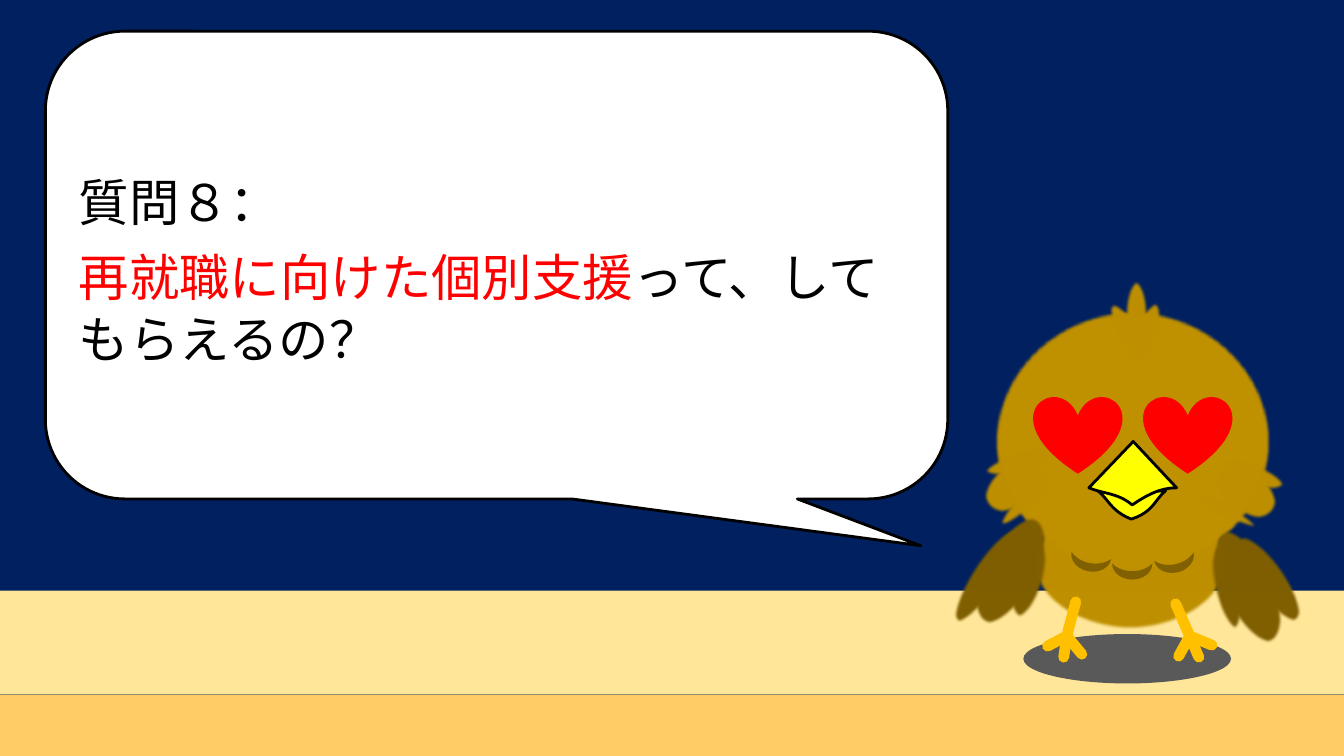
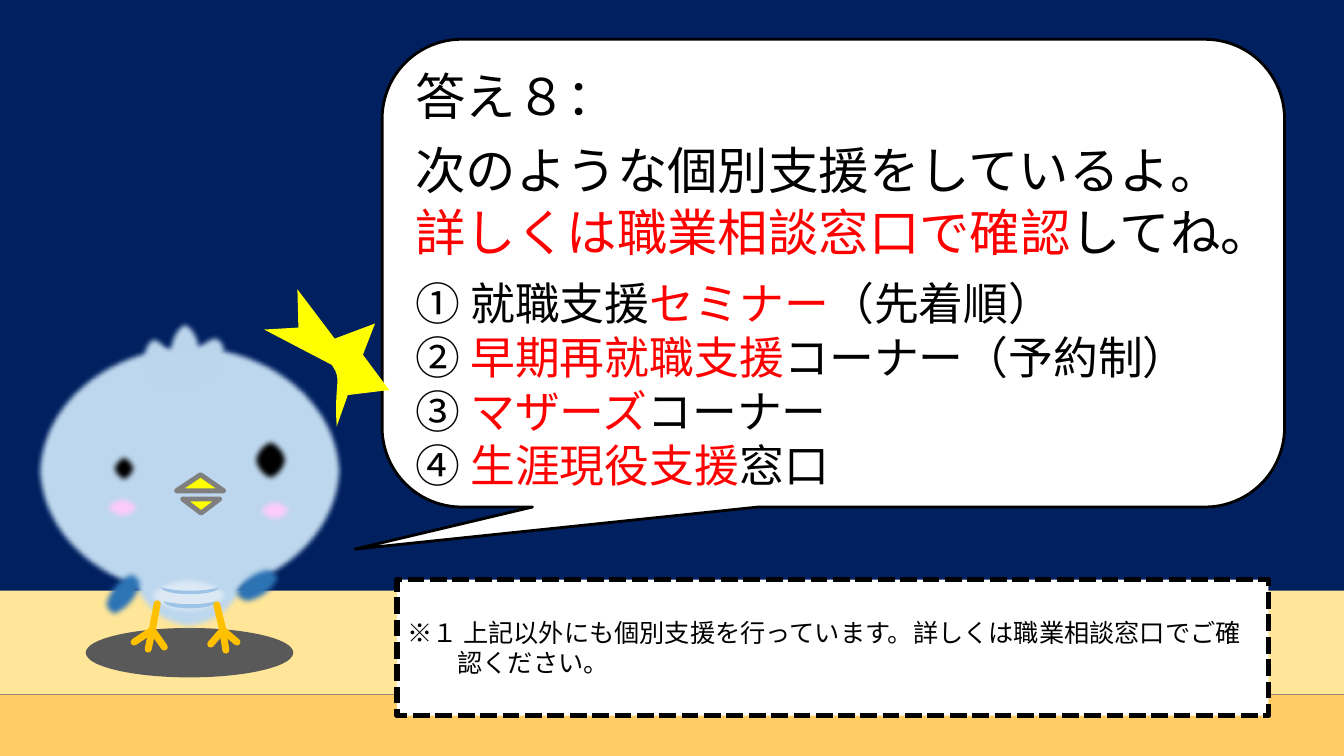
from lxml.etree import SubElement
from pptx import Presentation
from pptx.dml.color import RGBColor
from pptx.enum.dml import MSO_LINE
from pptx.enum.shapes import MSO_CONNECTOR, MSO_SHAPE as PRESET
from pptx.enum.text import MSO_ANCHOR, MSO_AUTO_SIZE, PP_ALIGN
from pptx.oxml.ns import qn
from pptx.util import Inches, Pt

WIDTH, HEIGHT = 13.33, 7.5
FONT = "Noto Sans CJK JP"
COLOURS = {
    "night": "002060", "sand": "FFE699", "ground": "FFCC66", "shade": "595959",
    "white": "FFFFFF", "black": "000000", "red": "FF0000", "yellow": "FFFF00",
    "gold": "BF9000", "brown": "806000", "foot": "FFC000", "grey": "7F7F7F",
    "sky": "BDD7EE", "belly": "DEEBF7", "fold": "9DC3E6", "wing": "2E75B6",
    "cheek": "FFCCFF",
}
LINE_PITCH = {36: 44, 32: 38.5, 18: 21.5}
BANDS = [("sand", 5.86, 1.03), ("ground", 6.89, 0.61)]
CALLOUT_SIZE = (8.95, 4.64)
TEXT_INSET = 0.33
SHADOW_SIZE = (2.06, 0.49)

BROWN_BIRD = {
    "soft": 2,
    "ellipses": {
        "gold": [
            (10.24, 4.92, 1.93, 1.33, 0), (9.86, 3.08, 2.74, 2.6, 0),
            (9.82, 4.49, 0.45, 0.66, 231.7), (10.06, 4.65, 0.2, 0.66, 226.1),
            (9.97, 4.27, 0.21, 0.66, 255.4), (12.31, 4.38, 0.24, 0.66, 108.6),
            (12.11, 4.75, 0.15, 0.66, 116), (12.15, 4.55, 0.45, 0.66, 127.9),
            (11.15, 2.77, 0.24, 0.64, 0), (11.08, 2.96, 0.24, 0.64, 326.5),
            (11.24, 2.97, 0.24, 0.64, 21.4),
        ],
        "brown": [
            (9.76, 5.08, 0.53, 1.17, 26.9), (9.62, 5.17, 0.32, 1.09, 32.2),
            (10.04, 5.32, 0.32, 0.83, 14), (12.12, 5.21, 0.52, 1.22, 336.1),
            (12.03, 5.39, 0.27, 0.87, 347.5), (12.41, 5.24, 0.36, 1.01, 325.3),
        ],
    },
    "details": [
        (PRESET.MOON, "brown", (10.73, 5.39, 0.16, 0.4, 280), [0.52]),
        (PRESET.MOON, "brown", (11.58, 5.4, 0.16, 0.4, 257.8), [0.52]),
        (PRESET.MOON, "brown", (11.15, 5.47, 0.16, 0.4, 270), [0.52]),
        (PRESET.HEART, "red", (10.25, 3.93, 0.88, 0.77, 0), []),
        (PRESET.HEART, "red", (11.34, 3.93, 0.88, 0.77, 0), []),
    ],
    "foot_weight": 7.75,
    "feet": [
        ((10.67, 5.97), (10.58, 6.31), [(10.39, 6.41), (10.55, 6.52), (10.73, 6.49)]),
        ((11.66, 5.99), (11.8, 6.31), [(11.69, 6.51), (11.89, 6.52), (12.02, 6.4)]),
    ],
    "outlines": [
        ([(11.56, 4.87), (11.45, 4.96, 11.44, 5.08, 11.22, 5.15),
          (11.02, 5.07, 11, 4.96, 10.89, 4.87)], 2),
        ([(10.8, 4.84), (11.24, 4.38), (11.67, 4.84),
          (11.52, 4.84, 11.39, 4.9, 11.23, 5.01),
          (11.09, 4.89, 10.94, 4.9, 10.8, 4.84)], 2),
    ],
}
BLUE_BIRD = {
    "soft": 4,
    "ellipses": {
        "sky": [
            (1.26, 5.03, 1.22, 1.23, 0), (0.35, 3.4, 3.06, 2.54, 0),
            (1.41, 3.29, 0.39, 0.63, 335.8), (1.64, 3.16, 0.39, 0.63, 0),
            (1.83, 3.26, 0.39, 0.63, 39.6),
        ],
        "belly": [(1.44, 5.71, 0.86, 0.4, 0)],
        "wing": [(1.04, 5.61, 0.36, 0.57, 34.5), (2.37, 5.52, 0.36, 0.57, 241.2)],
        "cheek": [(1.01, 4.9, 0.41, 0.27, 0), (2.52, 4.93, 0.41, 0.27, 0)],
        "black": [(1.08, 4.48, 0.3, 0.34, 0), (2.48, 4.33, 0.4, 0.47, 0)],
    },
    "details": [
        (PRESET.MOON, "fold", (1.85, 5.74, 0.07, 0.52, 270), [0.58]),
        (PRESET.MOON, "fold", (1.85, 5.57, 0.07, 0.58, 270), [0.49]),
        (PRESET.ISOSCELES_TRIANGLE, "yellow", (1.75, 4.71, 0.47, 0.16, 0), [0.51]),
        (PRESET.ISOSCELES_TRIANGLE, "yellow", (1.81, 4.95, 0.37, 0.14, 180), []),
    ],
    "foot_weight": 5,
    "feet": [
        ((1.56, 5.99), (1.51, 6.25), [(1.33, 6.37), (1.47, 6.44), (1.63, 6.42)]),
        ((2.15, 6), (2.21, 6.25), [(2.09, 6.39), (2.24, 6.45), (2.35, 6.37)]),
    ],
    "outlines": [
        ([(2.62, 3.27), (2.96, 3.25), (2.95, 2.87), (3.32, 3.36), (3.72, 3.21),
          (3.6, 3.52), (3.86, 3.87), (3.45, 3.92), (3.34, 4.23),
          (3.31, 3.8, 3.4, 3.77, 3.29, 3.62)], 0),
    ],
}
SLIDES = [
    {
        "bird": BROWN_BIRD, "shadow": (10.15, 6.29),
        "callout": (0.45, 0.31), "pointer": [0.47, 0.6, 0.17],
        "title": "質問８：", "title_top": 1.69, "body_width": 8.3,
        "body": [(36, 0, [("再就職に向けた個別支援", "red"),
                          ("って、してもらえるの？", "black")])],
    },
    {
        "bird": BLUE_BIRD, "shadow": (0.85, 6.23),
        "callout": (3.79, 0.39), "pointer": [-0.53, 0.59, 0.17],
        "title": "答え８：", "title_top": 0.63, "body_width": 8.8,
        "body": [
            (36, 0, [("次のような個別支援をしているよ。", "black")]),
            (36, 0, [("詳しくは職業相談窓口で確認", "red"), ("してね。", "black")]),
            (32, 10.5, [("① 就職支援", "black"), ("セミナー", "red"), ("（先着順）", "black")]),
            (32, 0, [("② ", "black"), ("早期再就職支援", "red"), ("コーナー（予約制）", "black")]),
            (32, 0, [("③ ", "black"), ("マザーズ", "red"), ("コーナー", "black")]),
            (32, 0, [("④ ", "black"), ("生涯現役支援", "red"), ("窓口", "black")]),
        ],
        "note": "※１ 上記以外にも個別支援を行っています。詳しくは職業相談窓口でご確認ください。",
    },
]
NOTE_BOX = (3.94, 5.75, 8.64, 1.35)


def colour(name):
    return RGBColor.from_string(COLOURS[name])


def set_attributes(target, values):
    for name, value in values.items():
        setattr(target, name, value)


def paint(shape, fill, line=None, weight=0, soft=0):
    shape.shadow.inherit = False
    shape.fill.solid()
    shape.fill.fore_color.rgb = colour(fill)
    if line:
        shape.line.color.rgb = colour(line)
        shape.line.width = Pt(weight)
    else:
        shape.line.fill.background()
    if soft:
        effects = shape.element.spPr.find(qn("a:effectLst"))
        SubElement(effects, qn("a:softEdge"), rad=str(Pt(soft)))


def add_preset(slide, preset, fill, box, adjustments=(), **style):
    left, top, width, height, rotation = box
    shape = slide.shapes.add_shape(preset, *map(Inches, (left, top, width, height)))
    shape.rotation = rotation
    for index, value in enumerate(adjustments):
        shape.adjustments[index] = value
    paint(shape, fill, **style)
    return shape


def add_limb(slide, start, end, weight):
    limb = slide.shapes.add_connector(MSO_CONNECTOR.STRAIGHT, *map(Inches, start + end))
    limb.line.color.rgb = colour("foot")
    limb.line.width = Pt(weight)
    limb.line._get_or_add_ln().set("cap", "rnd")
    SubElement(limb.element.spPr, qn("a:effectLst"))


def flatten(outline, steps=12):
    points = [outline[0]]
    for part in outline[1:]:
        if len(part) == 2:
            points.append(part)
            continue
        x0, y0 = points[-1]
        x1, y1, x2, y2, x3, y3 = part
        for step in range(1, steps + 1):
            t = step / steps
            u = 1 - t
            a, b, c, d = u ** 3, 3 * u * u * t, 3 * u * t * t, t ** 3
            points.append((a * x0 + b * x1 + c * x2 + d * x3,
                           a * y0 + b * y1 + c * y2 + d * y3))
    return [(Inches(x), Inches(y)) for x, y in points]


def add_outline(slide, outline, weight):
    start, *rest = flatten(outline)
    builder = slide.shapes.build_freeform(*start)
    builder.add_line_segments(rest, close=True)
    paint(builder.convert_to_shape(), "yellow", "black" if weight else None, weight)


def draw_bird(slide, bird):
    for fill, boxes in bird["ellipses"].items():
        for box in boxes:
            add_preset(slide, PRESET.OVAL, fill, box, soft=bird["soft"])
    for preset, fill, box, adjustments in bird["details"]:
        beak = {"line": "grey", "weight": 3.5} if fill == "yellow" else {}
        add_preset(slide, preset, fill, box, adjustments, **beak)
    for hip, ankle, toes in bird["feet"]:
        add_limb(slide, hip, ankle, bird["foot_weight"])
        for toe in toes:
            add_limb(slide, ankle, toe, bird["foot_weight"])
    for outline, weight in bird["outlines"]:
        add_outline(slide, outline, weight)


def write(paragraph, size, space, runs, hanging=0):
    set_attributes(paragraph, {
        "alignment": PP_ALIGN.LEFT, "line_spacing": Pt(LINE_PITCH[size]),
        "space_before": Pt(space), "space_after": Pt(0),
    })
    properties = paragraph._p.get_or_add_pPr()
    properties.set("marL", str(Inches(hanging)))
    properties.set("indent", str(-Inches(hanging)))
    SubElement(properties, qn("a:buNone"))
    for text, ink in runs:
        run = paragraph.add_run()
        run.text = text
        set_attributes(run.font, {"size": Pt(size), "name": FONT, "bold": False})
        run.font.color.rgb = colour(ink)
        SubElement(run._r.get_or_add_rPr(), qn("a:ea"), typeface=FONT)


def fill_placeholder(slide, placeholder, box, paragraphs):
    slide.shapes._spTree.append(placeholder.element)
    set_attributes(placeholder, dict(zip(("left", "top", "width", "height"), map(Inches, box))))
    frame = placeholder.text_frame
    set_attributes(frame, {
        "margin_left": 0, "margin_right": 0, "margin_top": 0, "margin_bottom": 0,
        "word_wrap": True, "auto_size": MSO_AUTO_SIZE.NONE, "vertical_anchor": MSO_ANCHOR.TOP,
    })
    for index, content in enumerate(paragraphs):
        write(frame.add_paragraph() if index else frame.paragraphs[0], *content)


def add_note(slide, text):
    note = add_preset(slide, PRESET.RECTANGLE, "white", (*NOTE_BOX, 0), line="black", weight=4)
    note.line.dash_style = MSO_LINE.SQUARE_DOT
    set_attributes(note.text_frame, {"word_wrap": True, "vertical_anchor": MSO_ANCHOR.MIDDLE})
    write(note.text_frame.paragraphs[0], 18, 0, [(text, "black")], hanging=0.5)


def build_slide(presentation, content):
    slide = presentation.slides.add_slide(presentation.slide_layouts[1])
    for fill, top, height in BANDS:
        add_preset(slide, PRESET.RECTANGLE, fill, (0, top, WIDTH, height, 0))
    add_preset(slide, PRESET.OVAL, "shade", (*content["shadow"], *SHADOW_SIZE, 0))
    add_preset(slide, PRESET.ROUNDED_RECTANGULAR_CALLOUT, "white",
               (*content["callout"], *CALLOUT_SIZE, 0), content["pointer"],
               line="black", weight=2)
    draw_bird(slide, content["bird"])
    title, body = slide.placeholders
    left, top = content["callout"][0] + TEXT_INSET, content["title_top"]
    width, height = content["body_width"], 0.61
    body_top = top + height + 0.13
    body_height = content["callout"][1] + CALLOUT_SIZE[1] - body_top
    fill_placeholder(slide, title, (left, top, width, height),
                     [(36, 0, [(content["title"], "black")])])
    fill_placeholder(slide, body, (left, body_top, width, body_height), content["body"])
    if "note" in content:
        add_note(slide, content["note"])


def main():
    presentation = Presentation()
    set_attributes(presentation, {"slide_width": Inches(WIDTH), "slide_height": Inches(HEIGHT)})
    background = presentation.slide_master.background.fill
    background.solid()
    background.fore_color.rgb = colour("night")
    for content in SLIDES:
        build_slide(presentation, content)
    presentation.save("out.pptx")


if __name__ == "__main__":
    main()
